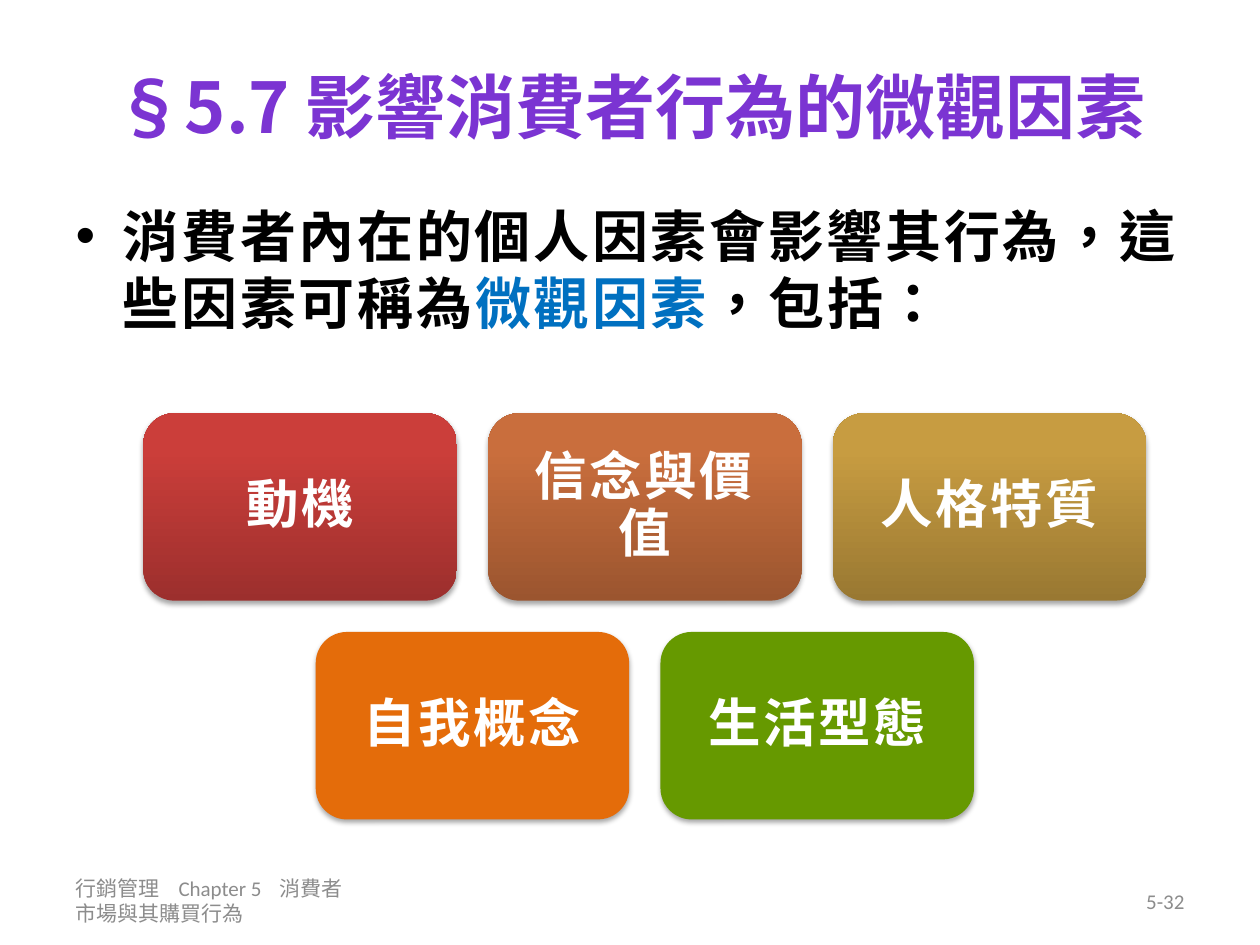
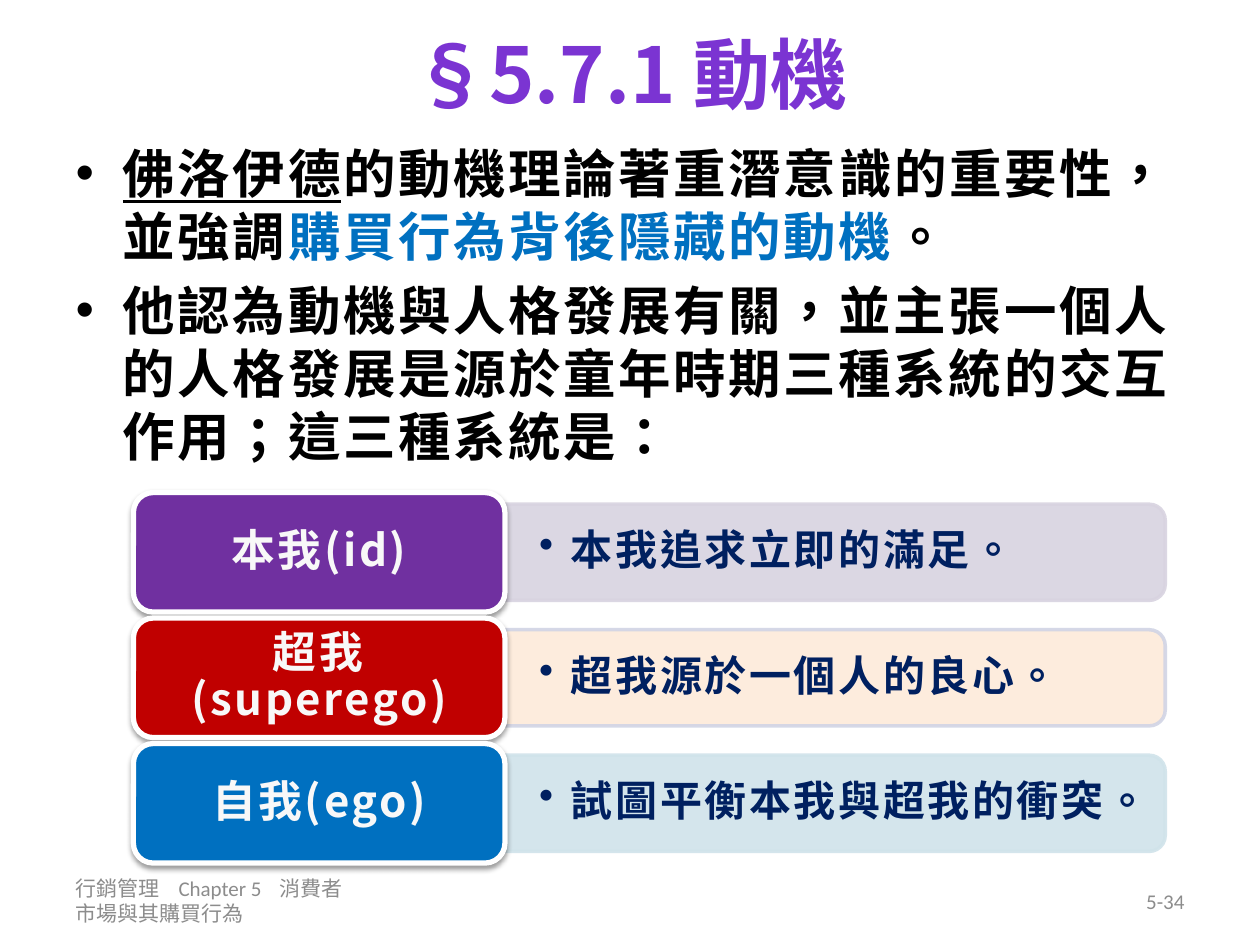
from lxml import etree
from pptx import Presentation
from pptx.dml.color import RGBColor
from pptx.enum.shapes import MSO_SHAPE
from pptx.enum.text import MSO_ANCHOR, MSO_AUTO_SIZE, PP_ALIGN
from pptx.oxml.ns import qn
from pptx.util import Cm, Pt

ROUNDED = MSO_SHAPE.ROUNDED_RECTANGLE
ROUNDED_TOP = MSO_SHAPE.ROUND_2_SAME_RECTANGLE
MIDDLE = MSO_ANCHOR.MIDDLE
LEFT, CENTER, RIGHT = PP_ALIGN.LEFT, PP_ALIGN.CENTER, PP_ALIGN.RIGHT
NO_AUTOFIT = MSO_AUTO_SIZE.NONE

COLORS = {
    "title": "7B34D2", "text": "000000", "accent": "0070C0", "footer": "8C8C8C",
    "white": "FFFFFF", "label": "F8F8F8", "navy": "002060",
    "red dark": "9C2F2D", "red": "CB3E3A",
    "copper dark": "9B552F", "copper": "C96E3D",
    "gold dark": "997832", "gold": "C79C41",
    "orange": "E46C0A", "green": "669900",
    "purple": "7030A0", "crimson": "C00000", "blue": "0070C0",
    "pale purple": "D8D3E0", "pale orange": "FDEADA", "pale blue": "D0E3EA",
    "pale edge": "D1D4E5",
}
CJK_FONT = "Noto Sans CJK SC"
LATIN_FONT = "Calibri"


def write(frame, paragraphs, size, color="text", font=CJK_FONT, bold=True, spacing=1.5,
          align=None, anchor=None, margins=None, line_spacing=None, bullet_indent=None, tabs=()):
    """Fill a frame; each paragraph is a list of (text, color, underline) tuples or plain strings."""
    frame.word_wrap = True
    frame.auto_size = NO_AUTOFIT
    if anchor is not None:
        frame.vertical_anchor = anchor
    if margins:
        frame.margin_left = frame.margin_right = Cm(margins[0])
        frame.margin_top = frame.margin_bottom = Cm(margins[1])
    for index, pieces in enumerate(paragraphs):
        paragraph = frame.paragraphs[0] if index == 0 else frame.add_paragraph()
        if index == 0:
            paragraph.space_before = Pt(0)
        if align is not None:
            paragraph.alignment = align
        if line_spacing:
            paragraph.line_spacing = line_spacing
        properties = paragraph._p.get_or_add_pPr()
        if bullet_indent:
            properties.set("marL", str(Cm(bullet_indent)))
            properties.set("indent", str(-Cm(bullet_indent)))
            etree.SubElement(properties, qn("a:buChar"), char="•")
        if tabs:
            tab_list = etree.SubElement(properties, qn("a:tabLst"))
            for position in tabs:
                etree.SubElement(tab_list, qn("a:tab"), pos=str(Cm(position)), algn="l")
        for piece in pieces:
            text, run_color, underline = (piece, color, False) if isinstance(piece, str) else piece
            run = paragraph.add_run()
            run.text = text
            run.font.size = Pt(size)
            run.font.bold = bold
            run.font.underline = underline
            run.font.color.rgb = RGBColor.from_string(COLORS[run_color])
            run.font.name = font
            run_properties = run._r.get_or_add_rPr()
            run_properties.set("lang", "zh-TW")
            run_properties.set("spc", str(int(spacing * 100)))
            east_asian = etree.Element(qn("a:ea"), typeface=CJK_FONT)
            run_properties.find(qn("a:latin")).addnext(east_asian)


def add_box(slide, kind, left, top, width, height, fill, dark=None, line=None,
            line_width=2, shadow=None, opacity=None):
    """Add a filled shape; dark makes a gradient from the bottom, shadow is an opacity in percent."""
    shape = slide.shapes.add_shape(kind, Cm(left), Cm(top), Cm(width), Cm(height))
    shape.shadow.inherit = False
    if dark:
        shape.fill.gradient()
        shape.fill.gradient_angle = 90
        for stop, name, position in zip(shape.fill.gradient_stops, (dark, fill), (0, 0.8)):
            stop.color.rgb = RGBColor.from_string(COLORS[name])
            stop.position = position
    else:
        shape.fill.solid()
        shape.fill.fore_color.rgb = RGBColor.from_string(COLORS[fill])
    if line:
        shape.line.color.rgb = RGBColor.from_string(COLORS[line])
        shape.line.width = Pt(line_width)
    else:
        shape.line.fill.background()
    shape_properties = shape._element.spPr
    if opacity:
        for color in shape_properties.iter(qn("a:srgbClr")):
            etree.SubElement(color, qn("a:alpha"), val=str(opacity * 1000))
    if shadow:
        outer = etree.SubElement(shape_properties.find(qn("a:effectLst")), qn("a:outerShdw"),
                                 blurRad=str(Pt(3.1)), dist=str(Pt(1.8)), dir="5400000",
                                 rotWithShape="0")
        color = etree.SubElement(outer, qn("a:srgbClr"), val=COLORS["text"])
        etree.SubElement(color, qn("a:alpha"), val=str(shadow * 1000))
    return shape


presentation = Presentation()
presentation.slide_width = Cm(25.4)
presentation.slide_height = Cm(19.05)

# Title, list and footer of each slide
pages = [
    {"title": "§5.7 影響消費者行為的微觀因素", "title size": 40, "title area": (0.33, 3.6),
     "body size": 32, "body area": (3.94, 3.99), "number": "5-32",
     "body": [["消費者內在的個人因素會影響其行為，這些因素可稱為",
               ("微觀因素", "accent", False), "，包括："]]},
    {"title": "§5.7.1 動機", "title size": 44, "title area": (0, 2.92),
     "body size": 30, "body area": (2.72, 8), "number": "5-34",
     "body": [[("佛洛伊德", "text", True), "的動機理論著重潛意識的重要性，並強調",
               ("購買行為背後隱藏的動機", "accent", False), "。"],
              ["他認為動機與人格發展有關，並主張一個人的人格發展是源於童年時期三種系統的交互作用；"
               "這三種系統是："]]},
]
slides = []
for page in pages:
    slide = presentation.slides.add_slide(presentation.slide_layouts[1])
    slides.append(slide)
    title, body = slide.shapes.title, slide.placeholders[1]
    for placeholder, area in ((title, page["title area"]), (body, page["body area"])):
        placeholder.left, placeholder.width = Cm(1.27), Cm(22.86)
        placeholder.top, placeholder.height = Cm(area[0]), Cm(area[1])
    write(title.text_frame, [[page["title"]]], page["title size"], color="title",
          spacing=0, align=CENTER, anchor=MIDDLE)
    write(body.text_frame, page["body"], page["body size"])
    footers = [(1.27, "行銷管理\tChapter 5\t消費者市場與其購買行為", LEFT, (2.08, 4.12)),
               (18.21, page["number"], RIGHT, ())]
    for left, text, align, tabs in footers:
        footer = slide.shapes.add_textbox(Cm(left), Cm(17.65), Cm(5.92), Cm(1.02))
        write(footer.text_frame, [[text]], 12, color="footer", font=LATIN_FONT, bold=False,
              spacing=0, align=align, anchor=MIDDLE, tabs=tabs)

# Micro factors: centred rows of cards
card_width, card_height, card_gap = 6.32, 3.78, 0.63
cards_center, cards_top = 13, 8.33
factor_rows = [
    [("動機", "red", "red dark"), ("信念與價值", "copper", "copper dark"),
     ("人格特質", "gold", "gold dark")],
    [("自我概念", "orange", None), ("生活型態", "green", None)],
]
for row_index, factors in enumerate(factor_rows):
    row_width = len(factors) * (card_width + card_gap) - card_gap
    top = cards_top + row_index * (card_height + card_gap)
    for column, (name, fill, dark) in enumerate(factors):
        left = cards_center - row_width / 2 + column * (card_width + card_gap)
        card = add_box(slides[0], ROUNDED, left, top, card_width, card_height, fill,
                       dark=dark, shadow=35)
        write(card.text_frame, [[name]], 30, color="white", align=CENTER, anchor=MIDDLE,
              margins=(0.3, 0.3), line_spacing=0.9)

# Systems of personality: a label with a pale band to its right
label_left, label_top, label_width, label_height = 2.69, 9.93, 7.49, 2.41
row_pitch = 2.53
band_left, band_length, band_height = 10.18, 13.31, 1.94
note_width, note_height = 13.2, 1.75
systems = [
    ("本我(id)", "本我追求立即的滿足。", "purple", "pale purple", "pale purple"),
    ("超我(superego)", "超我源於一個人的良心。", "crimson", "pale orange", "pale edge"),
    ("自我(ego)", "試圖平衡本我與超我的衝突。", "blue", "pale blue", "pale blue"),
]
for index, (name, note, fill, band_fill, band_line) in enumerate(systems):
    top = label_top + index * row_pitch
    middle = top + label_height / 2
    # The band is an upright shape turned a quarter to the right
    band = add_box(slides[1], ROUNDED_TOP, band_left + (band_length - band_height) / 2,
                   middle - band_length / 2, band_height, band_length, band_fill,
                   line=band_line, opacity=90)
    band.rotation = 90
    note_box = slides[1].shapes.add_textbox(Cm(band_left), Cm(middle - note_height / 2),
                                            Cm(note_width), Cm(note_height))
    write(note_box.text_frame, [[note]], 24, color="navy", anchor=MIDDLE, margins=(0.69, 0.36),
          line_spacing=0.9, bullet_indent=0.64)
    label = add_box(slides[1], ROUNDED, label_left, top, label_width, label_height, fill,
                    line="white", line_width=3, shadow=38)
    write(label.text_frame, [[name]], 25, color="label", align=CENTER, anchor=MIDDLE,
          margins=(0.25, 0.13), line_spacing=0.9)

presentation.save("out.pptx")
